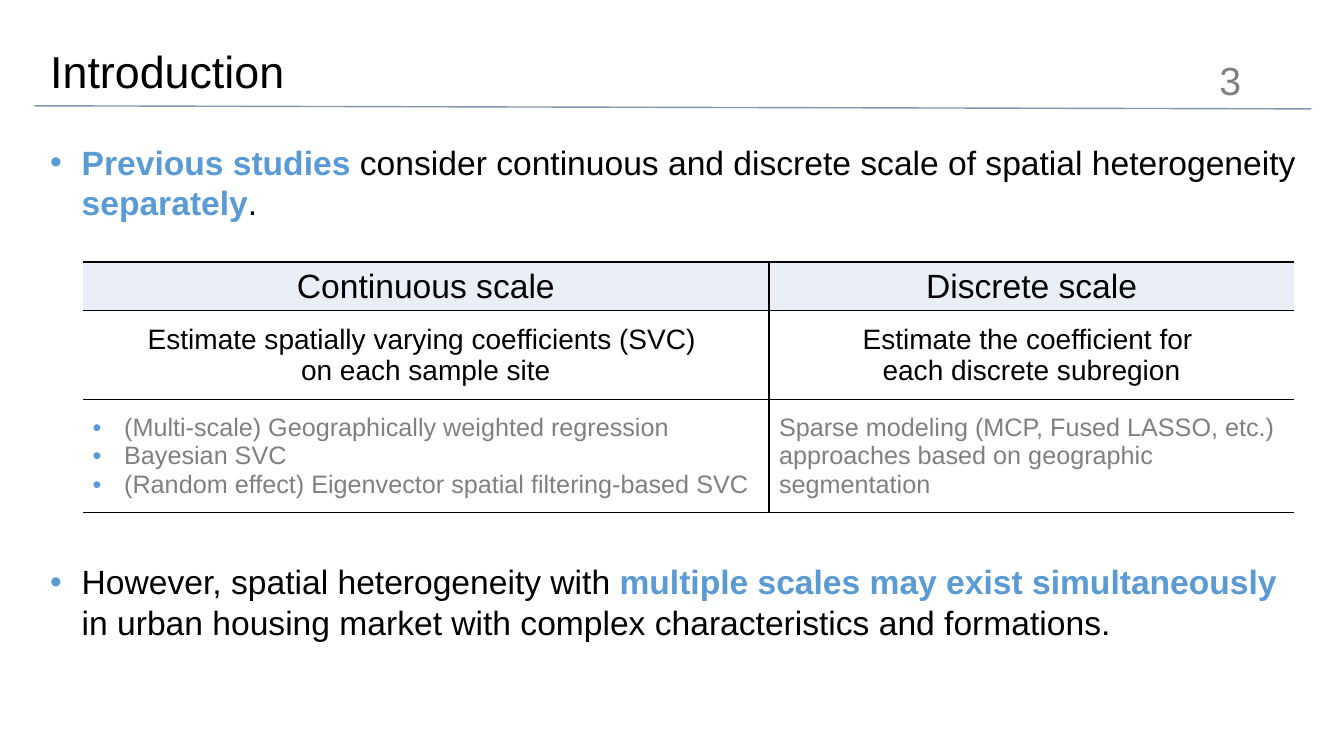
from dataclasses import dataclass

from lxml import etree
from pptx import Presentation
from pptx.dml.color import RGBColor
from pptx.enum.shapes import MSO_CONNECTOR
from pptx.enum.text import MSO_ANCHOR, PP_ALIGN
from pptx.oxml.ns import qn
from pptx.util import Pt

LEFT, CENTER, RIGHT = PP_ALIGN.LEFT, PP_ALIGN.CENTER, PP_ALIGN.RIGHT
TOP, MIDDLE = MSO_ANCHOR.TOP, MSO_ANCHOR.MIDDLE
STRAIGHT = MSO_CONNECTOR.STRAIGHT


@dataclass(frozen=True)
class Theme:
    font: str = "Arial"
    ink: str = "000000"
    accent: str = "5B9BD5"
    muted: str = "808080"
    rule: str = "8497B0"
    header_fill: str = "EAEFF7"
    title: int = 32
    number: int = 28
    body: int = 24
    summary: int = 20
    detail: int = 18
    indent: float = 22.5


THEME = Theme()


@dataclass(frozen=True)
class Span:
    text: str
    size: int = THEME.body
    color: str = THEME.ink
    bold: bool = False


@dataclass(frozen=True)
class Para:
    spans: tuple[Span, ...]
    align: PP_ALIGN = LEFT
    bullet: bool = False
    after: float = 0
    line_spacing: float = 1.0


@dataclass(frozen=True)
class Box:
    left: float
    top: float
    width: float
    height: float
    para: Para
    anchor: MSO_ANCHOR = TOP


def key(text: str) -> Span:
    return Span(text, color=THEME.accent, bold=True)


def centered(size: int, *lines: str) -> list[Para]:
    return [Para((Span(line, size),), CENTER) for line in lines]


def details(*lines: str, bullet: bool = False) -> list[Para]:
    return [Para((Span(line, THEME.detail, THEME.muted),), bullet=bullet) for line in lines]


BOXES = [
    Box(28.8, 0.7, 828, 104.4,
        Para((Span("Introduction", THEME.title),), line_spacing=0.9), MIDDLE),
    Box(664.6, 49, 229, 16.6,
        Para((Span("3", THEME.number, THEME.muted),), RIGHT), MIDDLE),
    Box(28.8, 97.9, 911.5, 65.5, Para((
        key("Previous studies "),
        Span("consider continuous and discrete scale of spatial heterogeneity "),
        key("separately"),
        Span("."),
    ), bullet=True, after=12)),
    Box(28.8, 397.4, 911.5, 65.5, Para((
        Span("However, spatial heterogeneity with "),
        key("multiple scales may exist simultaneously "),
        Span("in urban housing market with complex characteristics and formations."),
    ), bullet=True)),
]

COLUMN_WIDTHS = (490.3, 375.1)
ROW_HEIGHTS = (34.8, 63.5, 80.7)
SCALE_ROWS = [
    [centered(THEME.body, "Continuous scale"), centered(THEME.body, "Discrete scale")],
    [centered(THEME.summary, "Estimate spatially varying coefficients (SVC) ",
              "on each sample site"),
     centered(THEME.summary, "Estimate the coefficient for ", "each discrete subregion")],
    [details("(Multi-scale) Geographically weighted regression", "Bayesian SVC",
             "(Random effect) Eigenvector spatial filtering-based SVC", bullet=True),
     details("Sparse modeling (MCP, Fused LASSO, etc.) approaches based on "
             "geographic segmentation")],
]


def add_color(parent, color: str) -> None:
    etree.SubElement(parent, qn("a:srgbClr"), val=color)


def add_bullet(paragraph) -> None:
    properties = paragraph._p.get_or_add_pPr()
    properties.set("marL", str(Pt(THEME.indent)))
    properties.set("indent", str(-Pt(THEME.indent)))
    add_color(etree.SubElement(properties, qn("a:buClr")), THEME.accent)
    etree.SubElement(properties, qn("a:buFont"), typeface=THEME.font)
    etree.SubElement(properties, qn("a:buChar"), char="•")


def write_paras(frame, paras: list[Para]) -> None:
    for index, para in enumerate(paras):
        paragraph = frame.add_paragraph() if index else frame.paragraphs[0]
        if para.bullet:
            add_bullet(paragraph)
        paragraph.alignment = para.align
        paragraph.line_spacing = para.line_spacing
        paragraph.space_after = Pt(para.after)
        for span in para.spans:
            run = paragraph.add_run()
            run.text = span.text
            run.font.name = THEME.font
            run.font.size = Pt(span.size)
            run.font.bold = span.bold
            run.font.color.rgb = RGBColor.from_string(span.color)


def add_box(page, box: Box) -> None:
    shape = page.shapes.add_textbox(Pt(box.left), Pt(box.top), Pt(box.width), Pt(box.height))
    frame = shape.text_frame
    frame.word_wrap = True
    frame.vertical_anchor = box.anchor
    write_paras(frame, [box.para])


def set_borders(cell, visible: str) -> None:
    properties = cell._tc.get_or_add_tcPr()
    for side in "LRTB":
        line = etree.SubElement(properties, qn(f"a:ln{side}"), w=str(Pt(1)))
        if side in visible:
            add_color(etree.SubElement(line, qn("a:solidFill")), THEME.ink)
        else:
            etree.SubElement(line, qn("a:noFill"))


def add_scale_table(page) -> None:
    table = page.shapes.add_table(
        len(ROW_HEIGHTS), len(COLUMN_WIDTHS), Pt(59), Pt(187.2),
        Pt(sum(COLUMN_WIDTHS)), Pt(sum(ROW_HEIGHTS))).table
    table.first_row = table.horz_banding = False
    for column, width in zip(table.columns, COLUMN_WIDTHS):
        column.width = Pt(width)
    for row, height in zip(table.rows, ROW_HEIGHTS):
        row.height = Pt(height)
    for row_index, row_cells in enumerate(SCALE_ROWS):
        for column_index, paras in enumerate(row_cells):
            cell = table.cell(row_index, column_index)
            # Only the divider between the columns is drawn vertically
            set_borders(cell, "LTB" if column_index else "RTB")
            if row_index == 0:
                cell.fill.solid()
                cell.fill.fore_color.rgb = RGBColor.from_string(THEME.header_fill)
            else:
                cell.fill.background()
            cell.vertical_anchor = MIDDLE
            write_paras(cell.text_frame, paras)


def add_title_rule(page) -> None:
    rule = page.shapes.add_connector(STRAIGHT, Pt(24.5), Pt(75.6), Pt(936.7), Pt(77.8))
    rule.line.color.rgb = RGBColor.from_string(THEME.rule)
    rule.line.width = Pt(1)
    etree.SubElement(rule._element.spPr, qn("a:effectLst"))


def main() -> None:
    deck = Presentation()
    deck.slide_width, deck.slide_height = Pt(960), Pt(540)
    page = deck.slides.add_slide(deck.slide_layouts[6])
    # Heading rule, comparison table, then all text
    add_title_rule(page)
    add_scale_table(page)
    for box in BOXES:
        add_box(page, box)
    deck.save("out.pptx")


if __name__ == "__main__":
    main()
